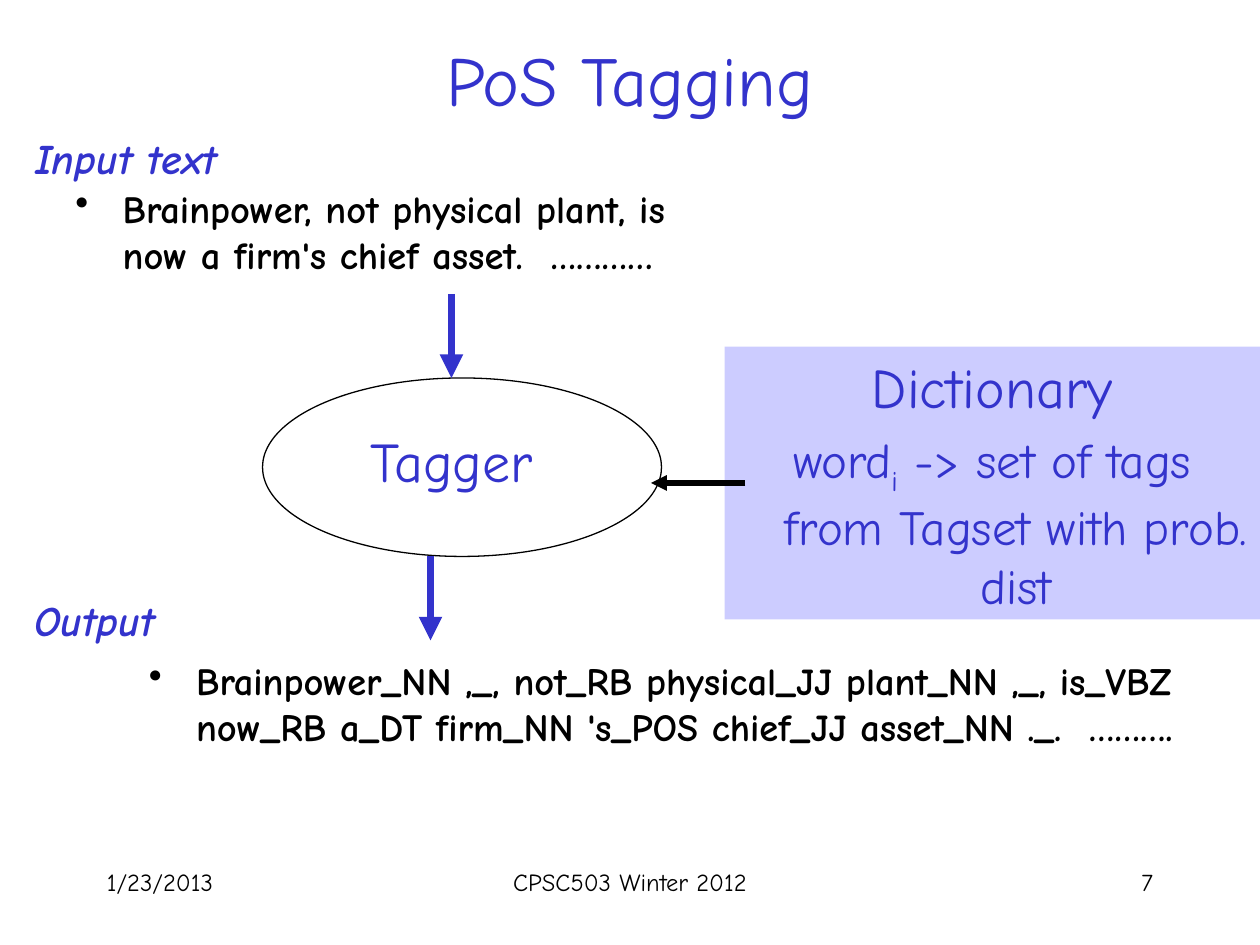
from lxml.etree import SubElement
from pptx import Presentation
from pptx.dml.color import RGBColor
from pptx.enum.shapes import MSO_CONNECTOR as Connector, MSO_SHAPE as Shape
from pptx.enum.text import MSO_ANCHOR as Anchor, PP_ALIGN as Align
from pptx.oxml.ns import qn
from pptx.util import Pt

FONT = "Comic Neue"
COLORS = {"blue": "3333CC", "lilac": "CCCCFF", "black": "000000"}
HANG = 27  # hanging indent of body text


def rgb(name):
    return RGBColor.from_string(COLORS[name])


def points(*values):
    return [Pt(value) for value in values]


def add_span(para, text, size, color, bold=False, italic=False, baseline=None):
    span = para.add_run()
    span.text = text
    font = span.font
    font.name, font.size = FONT, Pt(size)
    font.bold, font.italic = bold, italic
    font.color.rgb = rgb(color)
    if baseline is not None:
        span._r.get_or_add_rPr().set("baseline", str(baseline * 1000))


def format_para(para, size, align=Align.LEFT, hanging=True, bullet=False):
    para.alignment = align
    if not hanging:
        return
    para.space_before = Pt(size * 0.2)
    props = para._p.get_or_add_pPr()
    props.set("marL", str(Pt(HANG)))
    props.set("indent", str(-Pt(HANG)))
    if bullet:
        SubElement(props, qn("a:buChar")).set("char", "•")


def add_text(shapes, place, text, size, color="black", align=Align.CENTER,
             hanging=True, bullet=False, anchor=Anchor.TOP, **style):
    frame = shapes.add_textbox(*points(*place)).text_frame
    frame.word_wrap = True
    frame.vertical_anchor = anchor
    para = frame.paragraphs[0]
    format_para(para, size, align, hanging, bullet)
    add_span(para, text, size, color, **style)


def add_arrow(shapes, start, end, color, width):
    arrow = shapes.add_connector(Connector.STRAIGHT, *points(*start, *end))
    arrow.line.color.rgb = rgb(color)
    arrow.line.width = Pt(width)
    SubElement(arrow.line._get_or_add_ln(), qn("a:tailEnd")).set("type", "triangle")
    SubElement(arrow._element.spPr, qn("a:effectLst"))


def add_dictionary(shapes):
    box = shapes.add_shape(Shape.RECTANGLE, *points(414, 198, 306, 156))
    box.shadow.inherit = False
    box.fill.solid()
    box.fill.fore_color.rgb = rgb("lilac")
    box.line.fill.background()
    frame = box.text_frame
    frame.word_wrap = True
    frame.vertical_anchor = Anchor.TOP

    heading = frame.paragraphs[0]
    format_para(heading, 32, Align.CENTER)
    add_span(heading, "Dictionary", 32, "blue")

    entry = frame.add_paragraph()
    format_para(entry, 28, Align.CENTER)
    add_span(entry, "word", 28, "blue")
    add_span(entry, "i", 28, "blue", baseline=-25)
    add_span(entry, " -> set of tags from Tagset with prob. dist", 28, "blue")


def add_tagger(shapes):
    group = shapes.add_group_shape().shapes
    add_text(group, (144, 240, 228, 54), "Tagger", 32, "blue")
    oval = group.add_shape(Shape.OVAL, *points(150, 216, 228, 102))
    oval.shadow.inherit = False
    oval.fill.background()
    oval.line.color.rgb = rgb("black")
    oval.line.width = Pt(0.75)


def main():
    deck = Presentation()
    deck.slide_width, deck.slide_height = points(720, 540)
    page = deck.slides.add_slide(deck.slide_layouts[6])
    shapes = page.shapes

    # Footer: date, course, page number
    for left, width, text, align in (
        (54, 150, "1/23/2013", Align.LEFT),
        (246, 228, "CPSC503 Winter 2012", Align.CENTER),
        (516, 150, "7", Align.RIGHT),
    ):
        add_text(shapes, (left, 492, width, 36), text, 14, align=align, hanging=False)

    # Title
    add_text(shapes, (54, 0, 612, 90), "PoS Tagging", 40, "blue",
             hanging=False, anchor=Anchor.MIDDLE)

    # Dictionary feeding the tagger
    add_dictionary(shapes)
    add_arrow(shapes, (426, 276), (372, 276), "black", 3)

    # Input and output: sample sentences and their labels
    for place, text in (
        ((78, 372, 612, 66), "Brainpower_NN ,_, not_RB physical_JJ plant_NN ,_, is_VBZ "
                             "now_RB a_DT firm_NN 's_POS chief_JJ asset_NN ._.  ………."),
        ((36, 102, 372, 60), "Brainpower, not physical plant, is "
                             "now a firm's chief asset.  …………"),
    ):
        add_text(shapes, place, text, 22, align=Align.LEFT, bullet=True, bold=True)
    for left, top, text in ((0, 72, "Input text"), (-18, 336, "Output")):
        add_text(shapes, (left, top, 144, 48), text, 24, "blue", bold=True, italic=True)

    # Flow through the tagger
    add_tagger(shapes)
    for x, top in ((258, 168), (246, 318)):
        add_arrow(shapes, (x, top), (x, top + 48), "blue", 4.5)

    deck.save("out.pptx")


if __name__ == "__main__":
    main()
